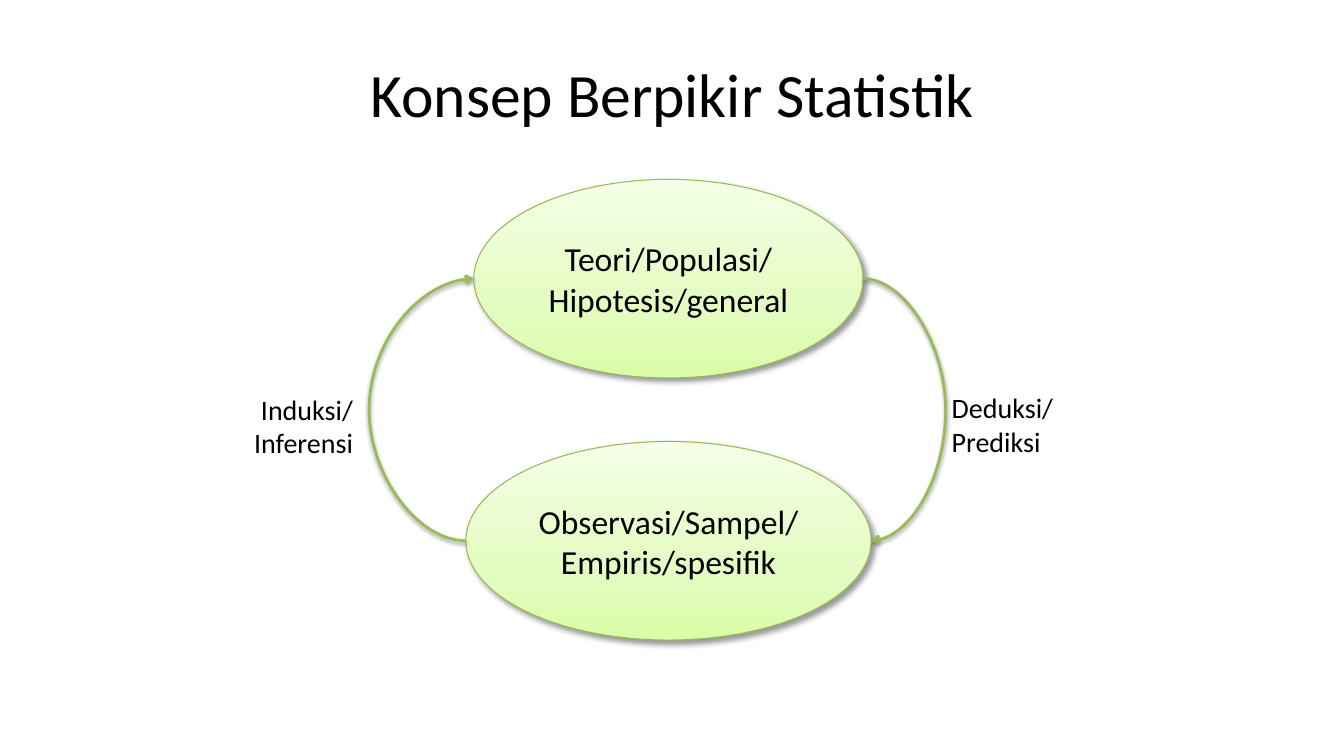
from dataclasses import dataclass

from lxml.etree import SubElement
from pptx import Presentation
from pptx.dml.color import RGBColor
from pptx.enum.shapes import MSO_CONNECTOR, MSO_SHAPE
from pptx.enum.text import MSO_ANCHOR, MSO_AUTO_SIZE, PP_ALIGN
from pptx.oxml.ns import qn
from pptx.util import Inches, Pt


@dataclass(frozen=True)
class Theme:
    font: str = "Calibri"
    text: str = "000000"
    outline: str = "98B955"
    arrow: str = "9BBB59"
    shadow: str = "000000"
    gradient: tuple = ((0, "DAFDA7"), (35, "E4FCC2"), (100, "F5FFE7"))
    title_size: int = 44
    concept_size: int = 24
    label_size: int = 20


THEME = Theme()


def write_lines(tf, lines, size, align):
    for i, line in enumerate(lines):
        p = tf.paragraphs[0] if i == 0 else tf.add_paragraph()
        p.alignment = align
        r = p.add_run()
        r.text = line
        r.font.name = THEME.font
        r.font.size = Pt(size)
        r.font.color.rgb = RGBColor.from_string(THEME.text)


def add_color(parent, rgb):
    return SubElement(parent, qn("a:srgbClr"), val=rgb)


def add_shadow(spPr, alpha, blur, dist, angle):
    """Add an outer shadow: alpha in percent, blur and dist in points, angle in degrees."""
    effects = spPr.find(qn("a:effectLst"))
    if effects is None:
        effects = SubElement(spPr, qn("a:effectLst"))
    shadow = SubElement(effects, qn("a:outerShdw"), blurRad=str(Pt(blur)),
                        dist=str(Pt(dist)), dir=str(angle * 60000), rotWithShape="0")
    color = add_color(shadow, THEME.shadow)
    SubElement(color, qn("a:alpha"), val=str(alpha * 1000))


def fill_gradient(s):
    """Fill from the bottom up with the stops of the theme."""
    s.fill.gradient()
    s.fill.gradient_angle = 90
    stops = s._element.spPr.find(qn("a:gradFill")).find(qn("a:gsLst"))
    for stop in list(stops):
        stops.remove(stop)
    for percent, rgb in THEME.gradient:
        add_color(SubElement(stops, qn("a:gs"), pos=str(percent * 1000)), rgb)


def add_title(slide, box, text):
    tf = slide.shapes.add_textbox(*map(Inches, box)).text_frame
    tf.word_wrap = True
    tf.vertical_anchor = MSO_ANCHOR.MIDDLE
    write_lines(tf, [text], THEME.title_size, PP_ALIGN.CENTER)


def add_concept(slide, box, lines):
    s = slide.shapes.add_shape(MSO_SHAPE.OVAL, *map(Inches, box))
    s.shadow.inherit = False
    fill_gradient(s)
    s.line.color.rgb = RGBColor.from_string(THEME.outline)
    s.line.width = Pt(0.75)
    add_shadow(s._element.spPr, 40, 4, 3, 45)
    s.text_frame.vertical_anchor = MSO_ANCHOR.MIDDLE
    write_lines(s.text_frame, lines, THEME.concept_size, PP_ALIGN.CENTER)


def add_arc_arrow(slide, start, end, bulge):
    """Curve from start to end, passing at a horizontal distance bulge from start."""
    c = slide.shapes.add_connector(MSO_CONNECTOR.CURVE, *map(Inches, start + end))
    c.line.color.rgb = RGBColor.from_string(THEME.arrow)
    c.line.width = Pt(2)
    spPr = c._element.spPr
    adjust = round(bulge / abs(end[0] - start[0]) * 100000)
    guides = spPr.find(qn("a:prstGeom")).find(qn("a:avLst"))
    SubElement(guides, qn("a:gd"), name="adj1", fmla=f"val {adjust}")
    SubElement(spPr.find(qn("a:ln")), qn("a:tailEnd"), type="arrow")
    add_shadow(spPr, 38, 3.1, 1.6, 90)


def add_label(slide, box, lines, align):
    tf = slide.shapes.add_textbox(*map(Inches, box)).text_frame
    tf.word_wrap = False
    tf.auto_size = MSO_AUTO_SIZE.SHAPE_TO_FIT_TEXT
    write_lines(tf, lines, THEME.label_size, align)


def add_cycle(slide, box):
    """Two concepts, one above the other, joined by a labelled arrow on each side."""
    left, top, width, height = box
    center = left + 4.22
    oval_h = 1.97
    theory_w, data_w = 3.86, 4.02
    data_top = top + height - oval_h
    theory_y, data_y = top + oval_h / 2, data_top + oval_h / 2

    add_concept(slide, (center - theory_w / 2, top, theory_w, oval_h),
                ["Teori/Populasi/", "Hipotesis/general"])
    add_concept(slide, (center - data_w / 2, data_top, data_w, oval_h),
                ["Observasi/Sampel/", "Empiris/spesifik"])
    add_arc_arrow(slide, (center + theory_w / 2, theory_y),
                  (center + data_w / 2, data_y), 0.82)
    add_arc_arrow(slide, (center - data_w / 2, data_y),
                  (center - theory_w / 2, theory_y), -0.96)
    add_label(slide, (left + width - 1.22, top + 2.05, 1.22, 0.77),
              ["Deduksi/", "Prediksi"], PP_ALIGN.LEFT)
    add_label(slide, (left, top + 2.06, 1.19, 0.77),
              ["Induksi/", "Inferensi"], PP_ALIGN.RIGHT)


def main():
    prs = Presentation()
    prs.slide_width, prs.slide_height = Inches(13.33), Inches(7.5)
    slide = prs.slides.add_slide(prs.slide_layouts[6])
    add_title(slide, (0.67, 0.3, 12, 1.25), "Konsep Berpikir Statistik")
    add_cycle(slide, (2.41, 1.78, 8.15, 4.57))
    prs.save("out.pptx")


if __name__ == "__main__":
    main()
